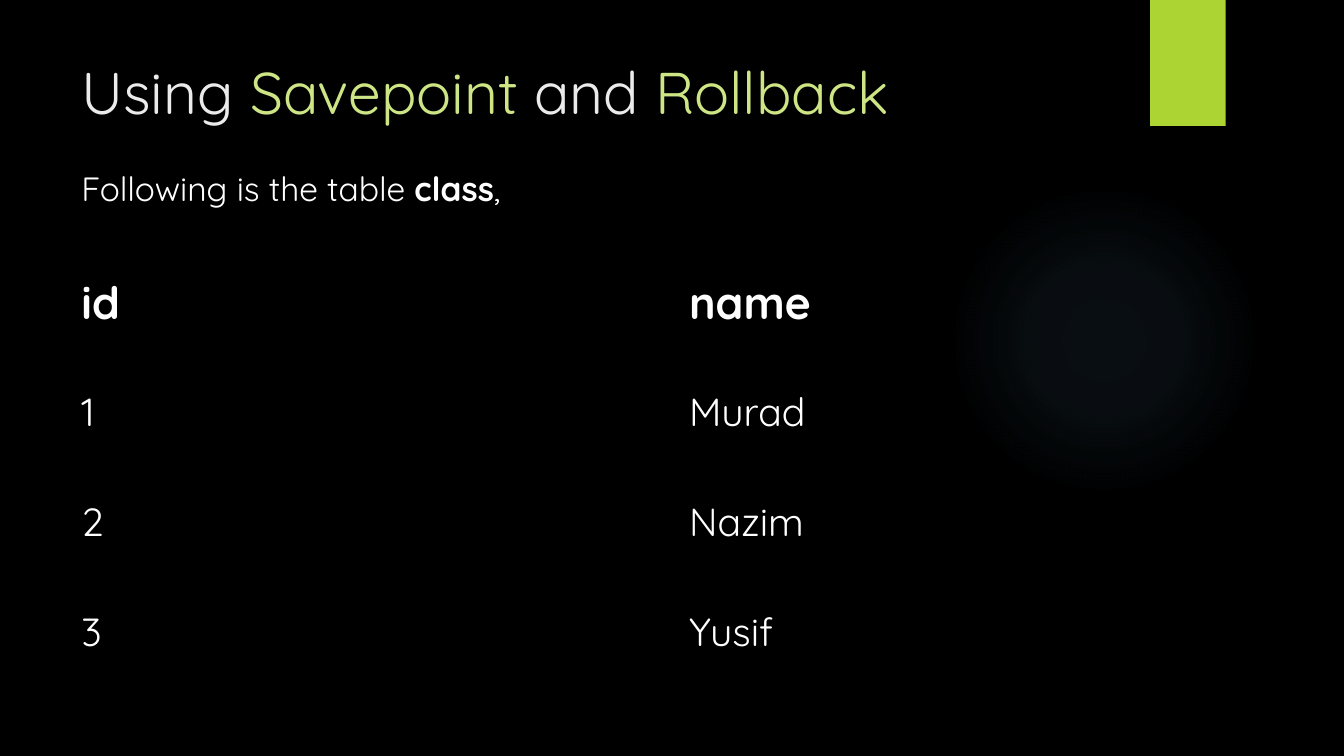
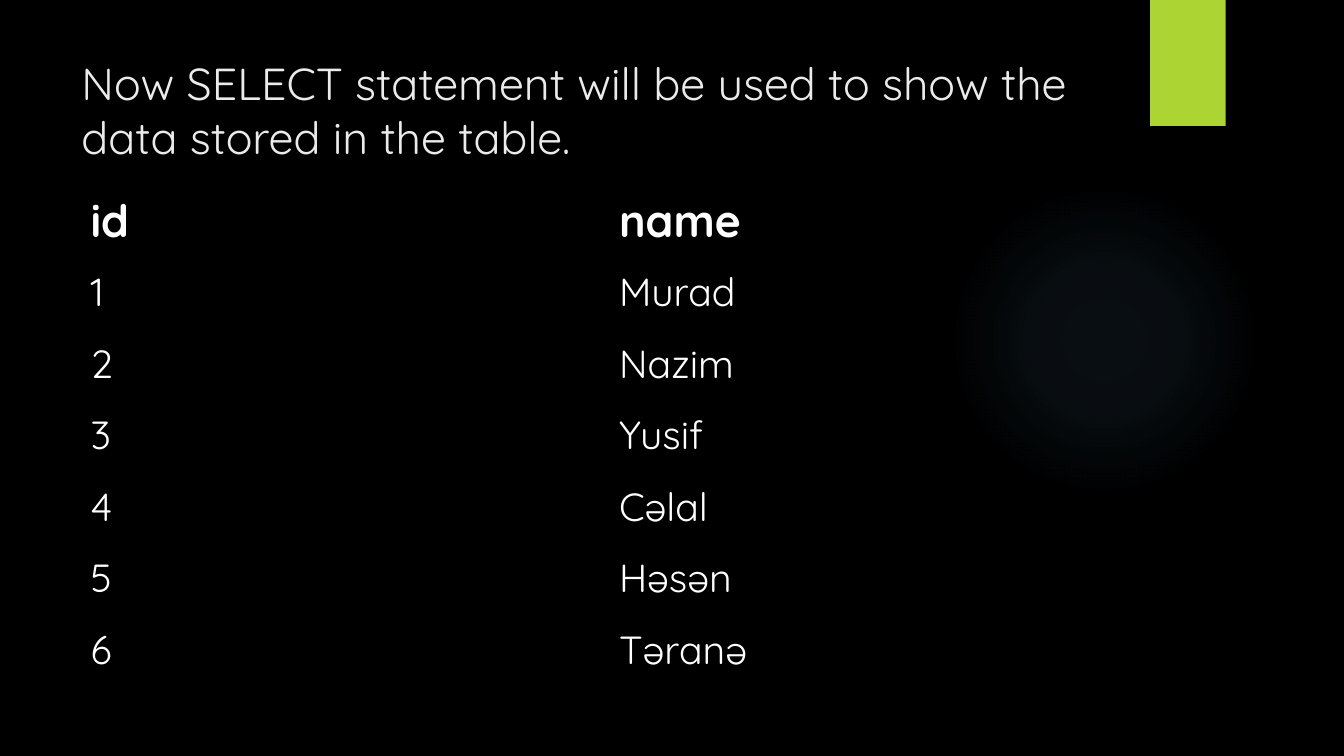
from dataclasses import dataclass

from lxml.etree import SubElement
from pptx import Presentation
from pptx.dml.color import RGBColor
from pptx.enum.shapes import MSO_SHAPE
from pptx.enum.text import MSO_ANCHOR, MSO_AUTO_SIZE, PP_ALIGN
from pptx.oxml.ns import qn
from pptx.util import Pt


@dataclass(frozen=True)
class Theme:
    font: str = "Quicksand"
    background: str = "000000"
    band: str = "ACD433"
    glow: str = "7AC4F0"
    title: str = "EBEBEB"
    accent: str = "CDE585"
    body: str = "FFFFFF"
    title_size: int = 42
    header_size: int = 32
    cell_size: int = 28
    body_size: int = 24


THEME = Theme()
LEFT = 51
GLOW_STOPS = ((0, 7), (36, 6), (69, 0))  # position and opacity, in percent
NO_GRID_STYLE = "{2D5ABB26-0587-4C30-8999-92F81FD0307C}"


def format_span(span, size, color, bold=False):
    span.font.name = THEME.font
    span.font.size = Pt(size)
    span.font.bold = bold
    span.font.color.rgb = RGBColor.from_string(color)


def write_spans(para, spans, size):
    """Add one run for each (text, colour, bold)."""
    for text, color, bold in spans:
        span = para.add_run()
        span.text = text
        format_span(span, size, color, bold)


def add_plain_shape(page, kind, left, top, width, height):
    shape = page.shapes.add_shape(kind, Pt(left), Pt(top), Pt(width), Pt(height))
    shape.shadow.inherit = False
    shape.line.fill.background()
    return shape


def fill_with_glow(shape):
    """Give the shape a radial gradient that fades outwards."""
    shape.fill.gradient()
    gradient = shape.fill._xPr.find(qn("a:gradFill"))
    for child in list(gradient):
        gradient.remove(child)
    stops = SubElement(gradient, qn("a:gsLst"))
    for position, opacity in GLOW_STOPS:
        stop = SubElement(stops, qn("a:gs"), pos=str(position * 1000))
        color = SubElement(stop, qn("a:srgbClr"), val=THEME.glow)
        SubElement(color, qn("a:alpha"), val=str(opacity * 1000))
    circle = SubElement(gradient, qn("a:path"), path="circle")
    SubElement(circle, qn("a:fillToRect"), l="50000", t="50000", r="50000", b="50000")


def add_page(deck, title_spans, title_size, title_height):
    """Add a page with the shared glow, corner band and title."""
    page = deck.slides.add_slide(deck.slide_layouts[5])

    fill_with_glow(add_plain_shape(page, MSO_SHAPE.OVAL, 677.5, 131.75, 222, 222))
    band = add_plain_shape(page, MSO_SHAPE.RECTANGLE, 821.5, 0, 54, 90)
    band.fill.solid()
    band.fill.fore_color.rgb = RGBColor.from_string(THEME.band)

    title = page.shapes.title
    title.left, title.top = Pt(LEFT), Pt(36)
    title.width, title.height = Pt(741), Pt(title_height)
    frame = title.text_frame
    frame.word_wrap = True
    frame.auto_size = MSO_AUTO_SIZE.NONE
    frame.vertical_anchor = MSO_ANCHOR.TOP
    para = frame.paragraphs[0]
    para.alignment = PP_ALIGN.LEFT
    write_spans(para, title_spans, title_size)
    return page


def add_text(page, left, top, width, height, spans):
    box = page.shapes.add_textbox(Pt(left), Pt(top), Pt(width), Pt(height))
    box.text_frame.word_wrap = True
    write_spans(box.text_frame.paragraphs[0], spans, THEME.body_size)


def add_name_table(page, left, top, column_width, row_height, names):
    """Add a borderless table that numbers the names from 1."""
    rows = [("id", "name")] + [(str(i), name) for i, name in enumerate(names, 1)]
    table = page.shapes.add_table(
        len(rows), 2, Pt(left), Pt(top), Pt(2 * column_width), Pt(len(rows) * row_height)
    ).table
    table.first_row = table.horz_banding = False
    table._tbl.tblPr.find(qn("a:tableStyleId")).text = NO_GRID_STYLE
    for column in table.columns:
        column.width = Pt(column_width)
    for i, row in enumerate(rows):
        table.rows[i].height = Pt(row_height)
        is_header = i == 0
        size = THEME.header_size if is_header else THEME.cell_size
        for j, text in enumerate(row):
            cell = table.cell(i, j)
            cell.fill.background()
            cell.vertical_anchor = MSO_ANCHOR.MIDDLE
            write_spans(cell.text_frame.paragraphs[0], [(text, THEME.body, is_header)], size)


def main():
    deck = Presentation()
    deck.slide_width, deck.slide_height = Pt(960), Pt(540)
    background = deck.slide_master.background.fill
    background.solid()
    background.fore_color.rgb = RGBColor.from_string(THEME.background)
    names = ["Murad", "Nazim", "Yusif"]

    # Table before the transaction
    page = add_page(
        deck,
        [
            ("Using ", THEME.title, False),
            ("Savepoint ", THEME.accent, False),
            ("and ", THEME.title, False),
            ("Rollback", THEME.accent, False),
        ],
        THEME.title_size,
        81,
    )
    add_name_table(page, LEFT, 177, 434, 78.3, names)
    add_text(
        page, LEFT, 116.5, 360, 36,
        [
            ("Following is the table ", THEME.body, False),
            ("class", THEME.body, True),
            (",", THEME.body, False),
        ],
    )

    # Result of the SELECT statement
    page = add_page(
        deck,
        [("Now SELECT statement will be used to show the data stored in the table.",
          THEME.title, False)],
        THEME.header_size,
        110,
    )
    add_name_table(page, 57.5, 132, 377.5, 51.1, names + ["Cəlal", "Həsən", "Təranə"])

    deck.save("out.pptx")


if __name__ == "__main__":
    main()
